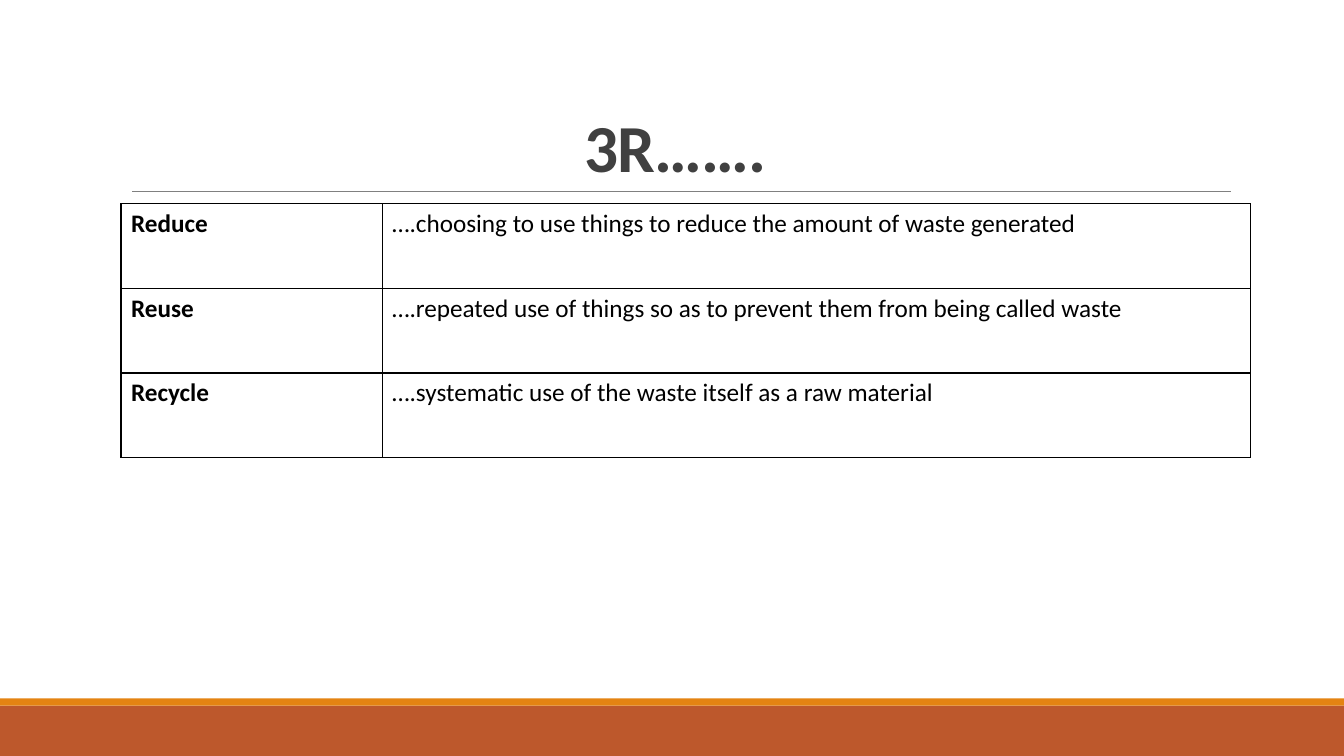
"""Build the 3R slide: a title over a bordered table of terms and meanings."""
from lxml import etree
from pptx import Presentation
from pptx.dml.color import RGBColor
from pptx.enum.shapes import MSO_CONNECTOR, MSO_SHAPE
from pptx.enum.text import MSO_ANCHOR, PP_ALIGN
from pptx.oxml import parse_xml
from pptx.oxml.ns import nsdecls, qn
from pptx.util import Inches, Pt

TITLE = "3R……."
TERMS = [
    ("Reduce", "….choosing to use things to reduce the amount of waste generated"),
    ("Reuse", "….repeated use of things so as to prevent them from being called waste"),
    ("Recycle", "….systematic use of the waste itself as a raw material"),
]
RUST = RGBColor(0xBD, 0x58, 0x2C)
ORANGE = RGBColor(0xE4, 0x83, 0x12)
GREY = RGBColor(0x80, 0x80, 0x80)
CHARCOAL = RGBColor(0x40, 0x40, 0x40)
BLACK = RGBColor(0, 0, 0)
FONT = "Calibri"
RECTANGLE = MSO_SHAPE.RECTANGLE
STRAIGHT = MSO_CONNECTOR.STRAIGHT
CENTER = PP_ALIGN.CENTER
BOTTOM = MSO_ANCHOR.BOTTOM

SLIDE_W, SLIDE_H = 13.33, 7.5
FOOTER_BANDS = [(7, 0.5, RUST), (6.93, 0.07, ORANGE)]
COLUMN_WIDTHS = (2.59, 8.61)
ROW_HEIGHT = 0.84
LEFT, TABLE_TOP = 1.2, 2.02
RULE_LEFT, RULE_RIGHT, RULE_Y = 1.31, 12.21, 1.9


def style_run(run, size, color, bold):
    run.font.name = FONT
    run.font.size = Pt(size)
    run.font.color.rgb = color
    run.font.bold = bold


def add_borders(cell):
    properties = cell._tc.get_or_add_tcPr()
    for position, side in enumerate(("lnL", "lnR", "lnT", "lnB")):
        border = parse_xml(
            f'<a:{side} {nsdecls("a")} w="12700"><a:solidFill>'
            f'<a:srgbClr val="{BLACK}"/></a:solidFill></a:{side}>'
        )
        properties.insert(position, border)


def add_footer(slide):
    for top, height, color in FOOTER_BANDS:
        band = slide.shapes.add_shape(
            RECTANGLE, 0, Inches(top), Inches(SLIDE_W), Inches(height)
        )
        band.shadow.inherit = False
        band.fill.solid()
        band.fill.fore_color.rgb = color
        band.line.fill.background()


def add_title(slide):
    rule = slide.shapes.add_connector(
        STRAIGHT, Inches(RULE_LEFT), Inches(RULE_Y), Inches(RULE_RIGHT), Inches(RULE_Y)
    )
    rule.line.color.rgb = GREY
    rule.line.width = Pt(0.5)
    etree.SubElement(rule._element.spPr, qn("a:effectLst"))

    title = slide.shapes.add_textbox(
        Inches(LEFT), Inches(0.31), Inches(11), Inches(1.59)
    )
    frame = title.text_frame
    frame.word_wrap = True
    frame.vertical_anchor = BOTTOM
    frame.text = TITLE
    heading = frame.paragraphs[0]
    heading.alignment = CENTER
    heading.line_spacing = 0.85
    style_run(heading.runs[0], 48, CHARCOAL, True)
    heading.runs[0].font._element.set("spc", "-50")


def add_terms(slide):
    table = slide.shapes.add_table(
        len(TERMS), len(COLUMN_WIDTHS), Inches(LEFT), Inches(TABLE_TOP),
        Inches(sum(COLUMN_WIDTHS)), Inches(ROW_HEIGHT * len(TERMS)),
    ).table
    table.first_row = False
    table.horz_banding = False
    for column, width in zip(table.columns, COLUMN_WIDTHS):
        column.width = Inches(width)
    for row, entry in zip(table.rows, TERMS):
        row.height = Inches(ROW_HEIGHT)
        for index, (cell, wording) in enumerate(zip(row.cells, entry)):
            cell.text = wording
            cell.fill.background()
            add_borders(cell)
            style_run(cell.text_frame.paragraphs[0].runs[0], 18, BLACK, index == 0)


def main():
    deck = Presentation()
    deck.slide_width, deck.slide_height = Inches(SLIDE_W), Inches(SLIDE_H)
    slide = deck.slides.add_slide(deck.slide_layouts[6])
    add_footer(slide)
    add_title(slide)
    add_terms(slide)
    deck.save("out.pptx")


if __name__ == "__main__":
    main()
